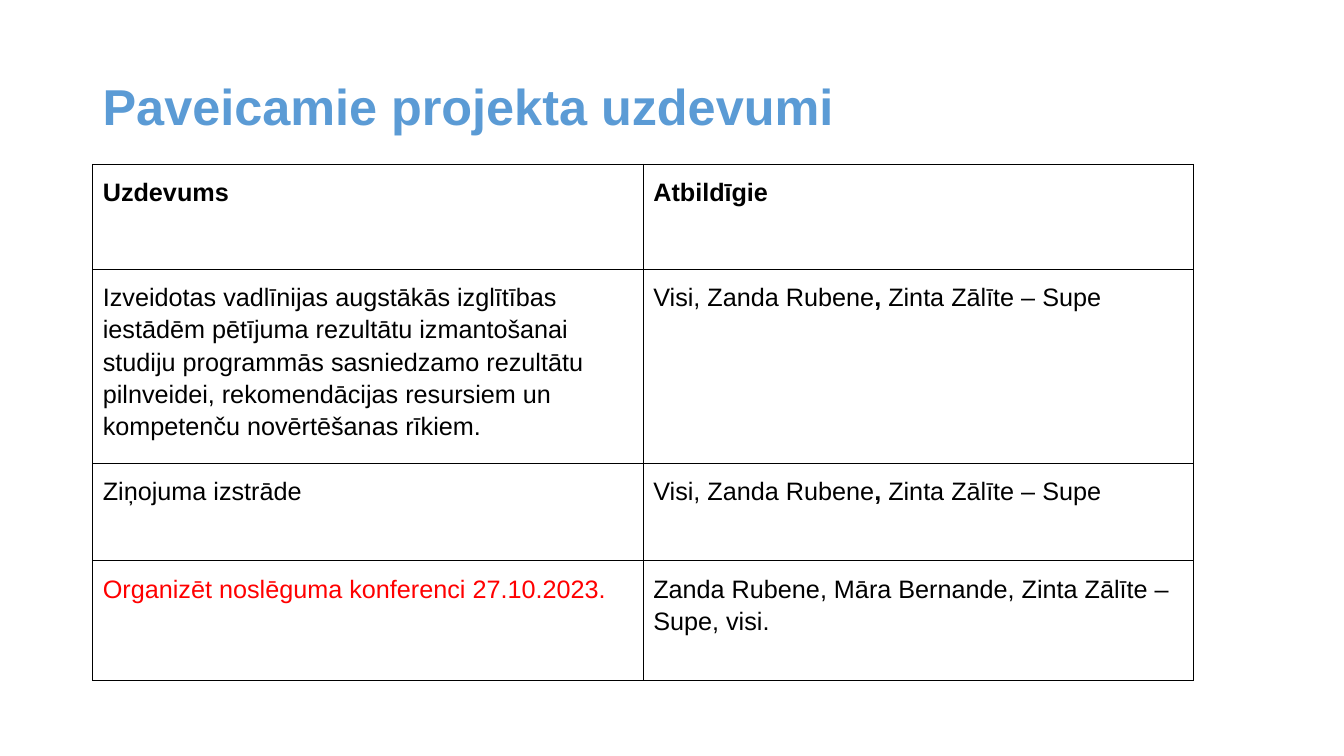
from lxml.etree import SubElement
from pptx import Presentation
from pptx.dml.color import RGBColor
from pptx.enum.text import MSO_ANCHOR as Anchor, PP_ALIGN as Align
from pptx.oxml.ns import qn
from pptx.util import Inches, Pt

BLACK, BLUE, RED = "000000", "5B9BD5", "FF0000"
VISI = [("Visi, Zanda Rubene", {}), (", ", {"bold": True}), ("Zinta Zālīte – Supe", {})]

# Each cell is a list of (text, format) spans
TASKS = [
    [[("Uzdevums", {"bold": True})], [("Atbildīgie", {"bold": True})]],
    [[("Izveidotas vadlīnijas augstākās izglītības iestādēm pētījuma rezultātu "
       "izmantošanai studiju programmās sasniedzamo rezultātu pilnveidei, "
       "rekomendācijas resursiem un kompetenču novērtēšanas rīkiem.", {})], VISI],
    [[("Ziņojuma izstrāde", {})], VISI],
    [[("Organizēt noslēguma konferenci 27.10.2023.", {"color": RED})],
     [("Zanda Rubene, Māra Bernande, Zinta Zālīte – Supe, visi.", {})]],
]
ROW_HEIGHTS = [1.04, 1.84, 0.97, 1.19]


def color(hex_text):
    return RGBColor.from_string(hex_text)


def set_all(target, values):
    for name, value in values.items():
        setattr(target, name, value)


def add_span(para, text, size, **look):
    span = para.add_run()
    span.text = text
    span.font.color.rgb = color(look.pop("color", BLACK))
    set_all(span.font, {"name": "Arial", "size": Pt(size), "bold": False, **look})


def add_border(cell):
    props = cell._tc.get_or_add_tcPr()
    for position, side in enumerate(("a:lnL", "a:lnR", "a:lnT", "a:lnB")):
        line = SubElement(props, qn(side), w=str(Pt(0.75)))
        fill = SubElement(line, qn("a:solidFill"))
        SubElement(fill, qn("a:srgbClr"), val=BLACK)
        props.remove(line)
        props.insert(position, line)


def add_title(page, left, top, width, height):
    box = page.shapes.add_textbox(*map(Inches, (left, top, width, height)))
    set_all(box.text_frame, {"word_wrap": True, "vertical_anchor": Anchor.MIDDLE,
                             "margin_bottom": Inches(0.13)})
    para = box.text_frame.paragraphs[0]
    para.line_spacing = 0.9
    add_span(para, "Paveicamie projekta uzdevumi", 36, bold=True, color=BLUE)


def add_tasks(page, left, top, width):
    frame = page.shapes.add_table(len(TASKS), len(TASKS[0]), Inches(left), Inches(top),
                                  Inches(width), Inches(sum(ROW_HEIGHTS)))
    table = frame.table
    set_all(table, {"first_row": False, "horz_banding": False})
    for column in table.columns:
        column.width = Inches(width / len(TASKS[0]))
    for row, height, contents in zip(table.rows, ROW_HEIGHTS, TASKS):
        row.height = Inches(height)
        for cell, spans in zip(row.cells, contents):
            margins = ("margin_left", "margin_right", "margin_top", "margin_bottom")
            set_all(cell, dict.fromkeys(margins, Inches(0.1)))
            cell.fill.background()
            add_border(cell)
            para = cell.text_frame.paragraphs[0]
            set_all(para, {"line_spacing": 1.15, "alignment": Align.LEFT})
            for text, look in spans:
                add_span(para, text, 18, **look)
    # The report task is justified
    table.cell(2, 0).text_frame.paragraphs[0].alignment = Align.JUSTIFY


def main():
    deck = Presentation()
    set_all(deck, {"slide_width": Inches(13.33), "slide_height": Inches(7.5)})
    page = deck.slides.add_slide(deck.slide_layouts[6])
    add_title(page, 0.92, 0.4, 11.5, 1.45)
    add_tasks(page, 0.92, 1.63, 10.92)
    deck.save("out.pptx")


if __name__ == "__main__":
    main()
